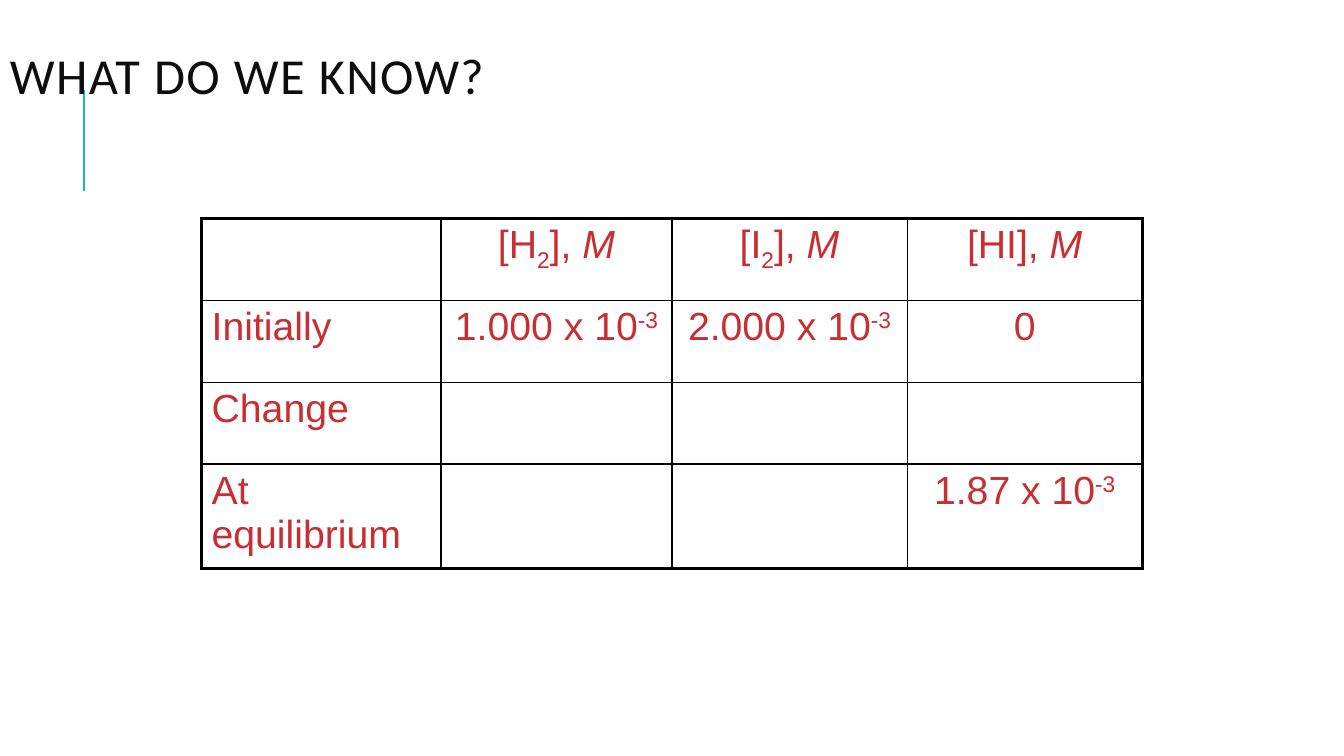
from dataclasses import dataclass
from pptx import Presentation
from pptx.dml.color import RGBColor as Rgb
from pptx.enum.shapes import MSO_CONNECTOR as Link
from pptx.enum.text import MSO_ANCHOR as Anchor, PP_ALIGN as Align
from pptx.oxml.ns import qn
from pptx.util import Pt
from lxml.etree import SubElement as Sub

PX = 9525


@dataclass(frozen=True)
class Theme:
    ink: str = "0D0D0D"
    red: str = "C82E32"
    blue: str = "1CADE4"
    edge: str = "000000"
    head: str = "Calibri"
    body: str = "Arial"
    big: int = 36
    mid: int = 28
    thin: float = 1
    rule: float = 1.5
    thick: float = 2.25


T = Theme()
COLS = (228, 220, 224, 224)
ROW = 78
UNIT = ("M", {"tilt": True})
SUB = ("2", {"base": -25})
POWER = ("-3", {"base": 30})
DATA = (
    ((), ("[H", SUB, "], ", UNIT), ("[I", SUB, "], ", UNIT), ("[HI], ", UNIT)),
    (("Initially",), ("1.000 x 10", POWER), ("2.000 x 10", POWER), ("0",)),
    (("Change",), (), (), ()),
    (("At equilibrium",), (), (), ("1.87 x 10", POWER)),
)


def px(*nums):
    return [num * PX for num in nums]


def write(para, text, font=T.body, size=T.mid, color=T.red, tilt=None, base=0, space=0):
    run = para.add_run()
    run.text = text
    run.font.name = font
    run.font.size = Pt(size)
    run.font.italic = tilt
    run.font.color.rgb = Rgb.from_string(color)
    props = run.font._element
    if base:
        props.set("baseline", str(base * 1000))
    if space:
        props.set("spc", str(space * 100))


def title(slide, text, box):
    frame = slide.shapes.add_textbox(*px(*box)).text_frame
    frame.word_wrap = True
    frame.vertical_anchor = Anchor.MIDDLE
    para = frame.paragraphs[0]
    para.line_spacing = 0.8
    write(para, text, font=T.head, size=T.big, color=T.ink, space=1)


def line(slide, start, end):
    bar = slide.shapes.add_connector(Link.STRAIGHT, *px(*start, *end))
    bar.line.color.rgb = Rgb.from_string(T.blue)
    bar.line.width = Pt(T.rule)
    Sub(bar._element.spPr, qn("a:effectLst"))


def border(cell, side, width):
    edge = Sub(cell._tc.get_or_add_tcPr(), qn("a:ln" + side), w=str(Pt(width)))
    fill = Sub(edge, qn("a:solidFill"))
    Sub(fill, qn("a:srgbClr"), val=T.edge)


def fill(cell, parts, align):
    para = cell.text_frame.paragraphs[0]
    para.alignment = align
    gap = Sub(para._p.get_or_add_pPr(), qn("a:spcBef"))
    Sub(gap, qn("a:spcPct"), val="20000")
    for part in parts:
        text, style = (part, {}) if isinstance(part, str) else part
        write(para, text, **style)


def table(slide, left, top):
    size = (sum(COLS), ROW * len(DATA))
    grid = slide.shapes.add_table(len(DATA), len(COLS), *px(left, top, *size)).table
    grid.first_row = grid.horz_banding = False
    for col, width in zip(grid.columns, COLS):
        col.width = width * PX
    for row, (band, cells) in enumerate(zip(grid.rows, DATA)):
        band.height = ROW * PX
        for col, parts in enumerate(cells):
            cell = grid.cell(row, col)
            outer = {"L": col == 0, "R": col == len(COLS) - 1,
                     "T": row == 0, "B": row == len(DATA) - 1}
            for side, edge in outer.items():
                border(cell, side, T.thick if edge else T.thin)
            cell.fill.background()
            fill(cell, parts, Align.CENTER if col else Align.LEFT)


def main():
    deck = Presentation()
    deck.slide_width, deck.slide_height = px(1280, 720)
    slide = deck.slides.add_slide(deck.slide_layouts[6])
    line(slide, (80, 182), (80, 86))
    title(slide, "WHAT DO WE KNOW?", (0, 16, 1280, 120))
    table(slide, 192, 208)
    deck.save("out.pptx")


if __name__ == "__main__":
    main()
